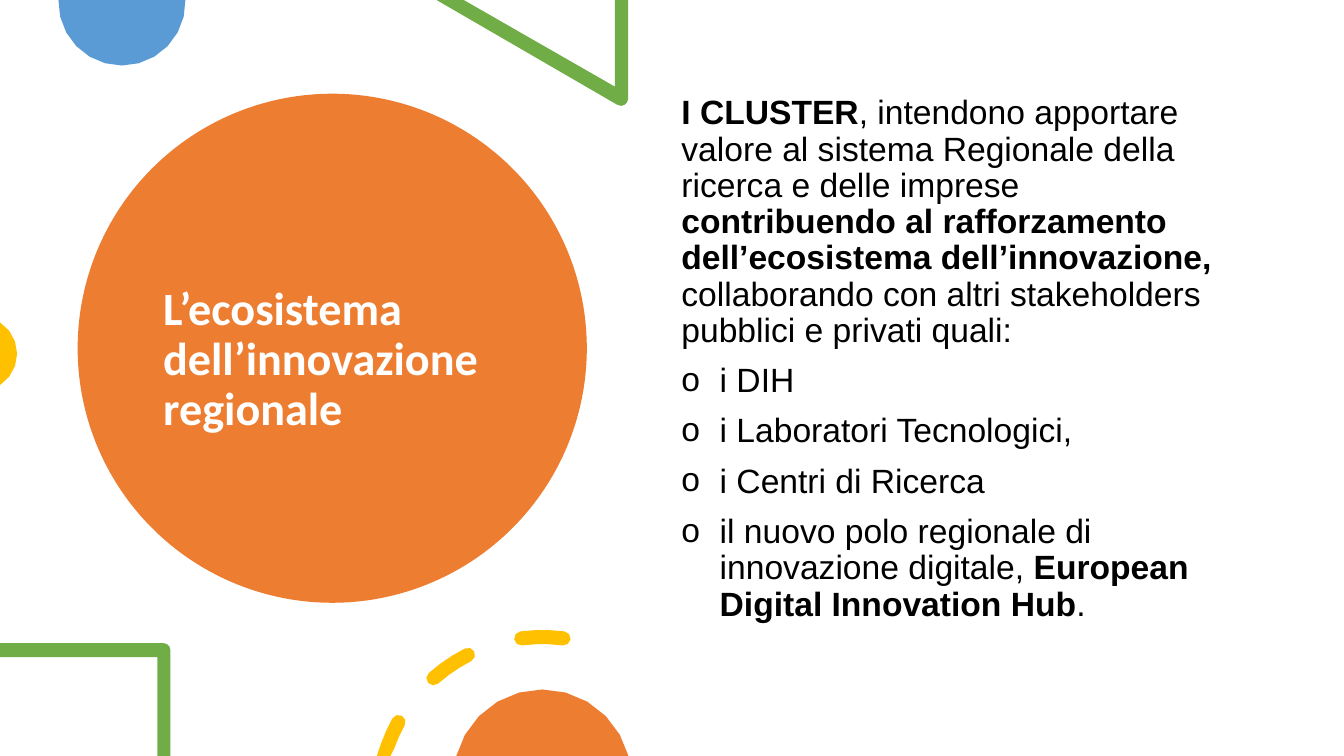
from math import cos, radians, sin

from lxml import etree
from pptx import Presentation
from pptx import util as u
from pptx.dml.color import RGBColor
from pptx.enum import shapes, text
from pptx.oxml.ns import qn

COLORS = {"orange": "ED7D31", "blue": "5B9BD5", "green": "70AD47",
          "yellow": "FFC000", "white": "FFFFFF", "black": "000000"}
WIDTH, HEIGHT = 13.33, 7.5
TITLE = "L’ecosistema dell’innovazione regionale"
INTRO = [("I CLUSTER", True),
         (", intendono apportare valore al sistema Regionale della ricerca e delle imprese ", False),
         ("contribuendo al rafforzamento dell’ecosistema dell’innovazione,", True),
         (" collaborando con altri stakeholders pubblici e privati quali:", False)]
PARTNERS = [[("i DIH", False)],
            [("i Laboratori Tecnologici,", False)],
            [("i Centri di Ricerca", False)],
            [("il nuovo polo regionale di innovazione digitale, ", False),
             ("European Digital Innovation Hub", True), (".", False)]]


def paint(sp, color):
    """Give a shape a flat fill with no line or shadow."""
    sp.shadow.inherit = False
    sp.fill.solid()
    sp.fill.fore_color.rgb = RGBColor.from_string(COLORS[color])
    sp.line.fill.background()


def arc(cx, cy, r, start, end, steps):
    """Return points along a circular arc, angles clockwise from the right."""
    angles = [radians(start + (end - start) * i / steps) for i in range(steps + 1)]
    return [(cx + r * cos(a), cy + r * sin(a)) for a in angles]


def outline(s, box, contours, color):
    """Draw closed contours, relative to a box and kept within it."""
    x, y, w, h = box
    placed = [[(u.Inches(x + min(max(px, 0), w)), u.Inches(y + min(max(py, 0), h)))
               for px, py in contour] for contour in contours]
    builder = s.shapes.build_freeform(*placed[0][0], scale=1.0)
    for i, points in enumerate(placed):
        if i:
            builder.move_to(*points[0])
        builder.add_line_segments(points[1:], close=True)
    paint(builder.convert_to_shape(), color)


def dash(cx, cy, r, half, start, end):
    """Return the contour of a round-ended dash along a circle."""
    first, last = arc(cx, cy, r, start, end, 1)
    return (arc(cx, cy, r + half, start, end, 3)
            + arc(*last, half, end, end + 180, 4)[1:-1]
            + arc(cx, cy, r - half, end, start, 3)
            + arc(*first, half, start + 180, start + 360, 4)[1:-1])


def add_runs(p, runs, font="Arial", size=24, color="black", before=0, bullet=None):
    """Fill a paragraph with (text, bold) runs in the given format."""
    if bullet:
        pPr = p._p.get_or_add_pPr()
        indent = u.Inches(0.38)
        pPr.set("marL", str(indent))
        pPr.set("indent", str(-indent))
        etree.SubElement(pPr, qn("a:buFont")).set("typeface", font)
        etree.SubElement(pPr, qn("a:buChar")).set("char", bullet)
    p.line_spacing = 0.9
    p.space_before = u.Pt(before)
    for words, bold in runs:
        r = p.add_run()
        r.text = words
        r.font.name, r.font.size, r.font.bold = font, u.Pt(size), bold
        r.font.color.rgb = RGBColor.from_string(COLORS[color])


def text_frame(s, box, anchor):
    """Add a wrapping text box and return its frame."""
    tf = s.shapes.add_textbox(*map(u.Inches, box)).text_frame
    tf.word_wrap = True
    tf.vertical_anchor = anchor
    return tf


def title_disc(s, box):
    """Place the large disc with the title inside it."""
    x, y, w, h = box
    sp = s.shapes.add_shape(shapes.MSO_SHAPE.OVAL, *map(u.Inches, box))
    paint(sp, "orange")
    tf = text_frame(s, (x + 0.75, y + 0.42, w - 1.51, h - 0.6), text.MSO_ANCHOR.MIDDLE)
    add_runs(tf.paragraphs[0], [(TITLE, True)], font="Calibri", size=33, color="white")


def decorations(s, box):
    """Place the cropped ornaments around the edges of a box."""
    h = box[3]
    outline(s, box, [arc(1.21, 0.02, 0.63, -2, 182, 12)], "blue")
    outline(s, box, [[(6.23, 0), (6.1, 0), (6.1, 0.86), (4.6, 0), (4.33, 0)]
                     + arc(6.16, 0.98, 0.07, 120, 0, 4)], "green")
    outline(s, box, [arc(-0.2, 3.51, 0.37, -57, 57, 6)], "yellow")
    outline(s, box, [[(0, h - 0.98), (0, h - 1.12)]
                     + arc(1.62, h - 1.05, 0.07, -90, 0, 3)
                     + [(1.69, h), (1.56, h), (1.56, h - 0.98)]], "green")
    spans = [(195, 208.9), (228.5, 243.1), (262.6, 277.4)]
    outline(s, box, [dash(5.38, h + 0.45, 1.63, 0.07, *span) for span in spans], "yellow")
    outline(s, box, [arc(5.38, h + 0.22, 0.88, 194, 346, 10)], "orange")


def cluster_text(s, box):
    """Place the introduction and the bulleted partners."""
    tf = text_frame(s, box, text.MSO_ANCHOR.TOP)
    add_runs(tf.paragraphs[0], INTRO)
    for runs in PARTNERS:
        add_runs(tf.add_paragraph(), runs, before=10, bullet="o")


def main():
    """Build and save the slide."""
    prs = Presentation()
    prs.slide_width, prs.slide_height = u.Inches(WIDTH), u.Inches(HEIGHT)
    s = prs.slides.add_slide(prs.slide_layouts[6])
    title_disc(s, (0.77, 0.93, 5.05, 5.05))
    decorations(s, (0, 0, WIDTH, HEIGHT))
    cluster_text(s, (6.66, 0.9, 5.75, 5.35))
    prs.save("out.pptx")


if __name__ == "__main__":
    main()
